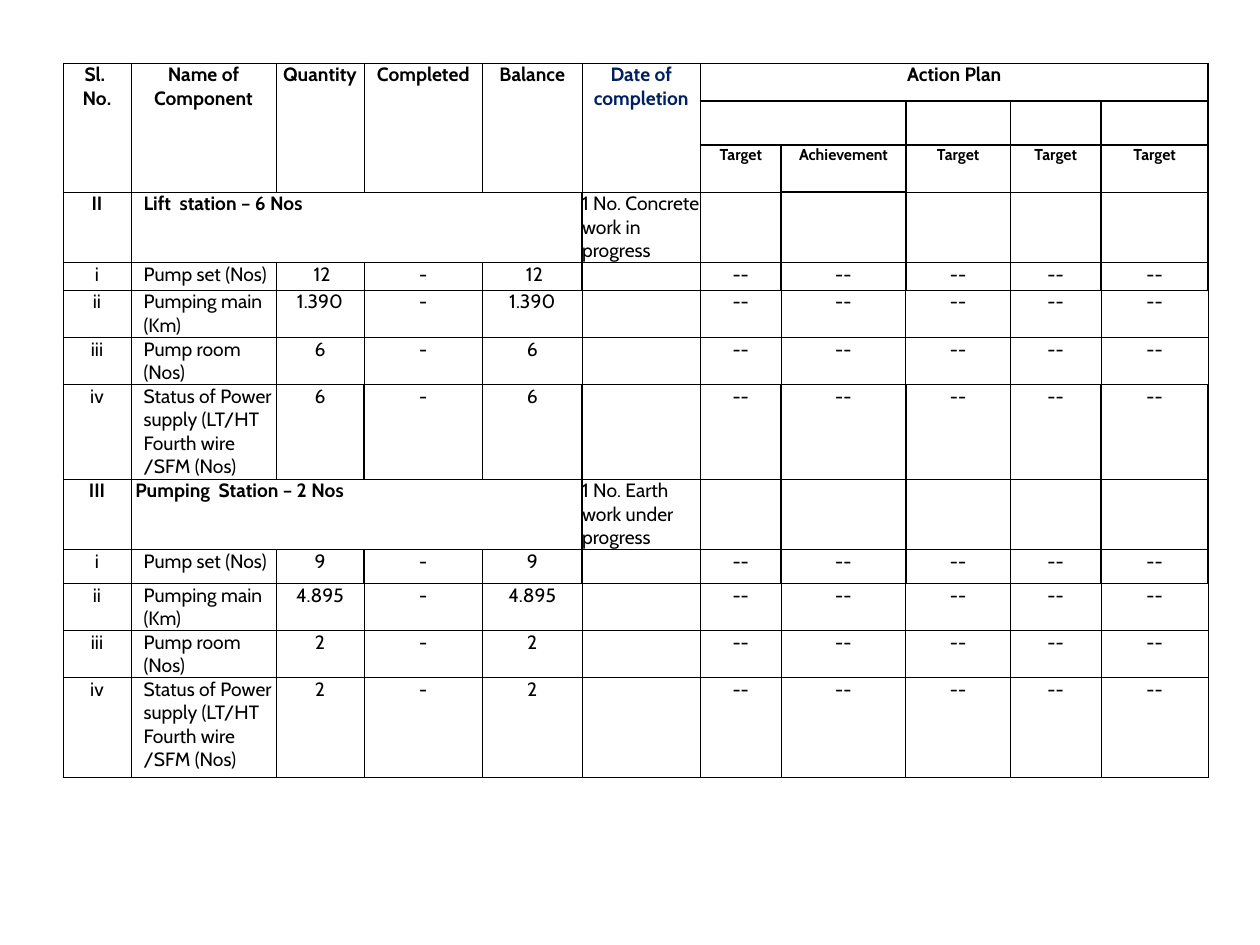
import pptx
import pptx.dml.color
import pptx.enum.text
import pptx.oxml
import pptx.oxml.ns
import pptx.util

Inches = pptx.util.Inches
Pt = pptx.util.Pt
ALIGN = pptx.enum.text.PP_ALIGN
BLACK = pptx.dml.color.RGBColor(0x00, 0x00, 0x00)
NAVY = pptx.dml.color.RGBColor(0x00, 0x20, 0x60)

COLUMN_WIDTHS = [0.54, 1.15, 0.7, 0.94, 0.79, 0.94, 0.64, 0.99, 0.83, 0.72, 0.85]
ROW_HEIGHTS = [0.3, 0.35, 0.37, 0.31, 0.22, 0.33, 0.33, 0.75, 0.28, 0.27, 0.33, 0.33, 0.79]
HEADINGS = ["Sl. \nNo.", "Name of Component", "Quantity", "Completed", "Balance",
            "Date of completion", "Action Plan"]
TARGETS = ["Target", "Achievement", "Target", "Target", "Target"]
COMPONENTS = ["Pump set (Nos)", "Pumping main (Km)", "Pump room (Nos)",
              "Status of Power supply (LT/HT Fourth wire /SFM (Nos)"]
NUMERALS = ["i", "ii", "iii", "iv"]
STATIONS = [
    (3, "II", "Lift  station – 6 Nos", 0.1, "1 No. Concrete work in progress",
     [" 12", "1.390", "6", "6"]),
    (8, "III", " Pumping  Station – 2 Nos", 0, "1 No. Earth work under progress",
     ["9", "4.895", "2", "2"]),
]

PLAN_COLUMNS = range(6, 11)
THIN, THICK = 0.5, 1
THICK_HORIZONTALS = ({(y, column) for y in (1, 2) for column in PLAN_COLUMNS}
                     | {(y, 3) for y in (10, 11, 12)} | {(3, 7), (7, 5)})
THICK_VERTICALS = ({(row, x) for row in (0, 1, 2) for x in range(6, 12)}
                   | {(row, x) for row in (3, 4, 7, 8, 9) for x in range(5, 12)}
                   | {(7, 3), (9, 3)})


def write(cell, text, align=ALIGN.CENTER, indent=0, size=11, bold=False, color=BLACK):
    font_format = {"name": "Cabin", "size": Pt(size), "bold": bold}
    cell.text = text
    for paragraph in cell.text_frame.paragraphs:
        paragraph.alignment = align
        if indent:
            properties = paragraph._p.get_or_add_pPr()
            properties.set("marL", str(Inches(indent)))
            properties.set("indent", "0")
        for run in paragraph.runs:
            for attribute, value in font_format.items():
                setattr(run.font, attribute, value)
            run.font.color.rgb = color


def draw_borders(cell, row, column):
    widths = {
        "lnL": (row, column) in THICK_VERTICALS,
        "lnR": (row, column + 1) in THICK_VERTICALS,
        "lnT": (row, column) in THICK_HORIZONTALS,
        "lnB": (row + 1, column) in THICK_HORIZONTALS,
    }
    for side, thick in widths.items():
        cell._tc.get_or_add_tcPr().append(pptx.oxml.parse_xml(
            f'<a:{side} {pptx.oxml.ns.nsdecls("a")} w="{Pt(THICK if thick else THIN)}">'
            f'<a:solidFill><a:srgbClr val="{BLACK}"/></a:solidFill></a:{side}>'))


def prepare_cells(table):
    margins = {f"margin_{side}": 0 for side in ("left", "top", "right", "bottom")}
    for row in range(len(ROW_HEIGHTS)):
        for column in range(len(COLUMN_WIDTHS)):
            cell = table.cell(row, column)
            for attribute, value in margins.items():
                setattr(cell, attribute, value)
            draw_borders(cell, row, column)
            cell.fill.background()
            cell.text_frame.paragraphs[0]._p.append(pptx.oxml.parse_xml(
                f'<a:endParaRPr {pptx.oxml.ns.nsdecls("a")} sz="1100"/>'))


def add_header(table):
    for column, heading in enumerate(HEADINGS):
        color = NAVY if heading == "Date of completion" else BLACK
        write(table.cell(0, column), heading, bold=True, color=color)
        if column < PLAN_COLUMNS[0]:
            table.cell(0, column).merge(table.cell(2, column))
    table.cell(0, 6).merge(table.cell(0, 10))
    table.cell(1, 6).merge(table.cell(1, 7))
    for column, target in zip(PLAN_COLUMNS, TARGETS):
        write(table.cell(2, column), target, size=9, bold=True)


def add_station(table, top_row, number, title, indent, progress, quantities):
    write(table.cell(top_row, 0), number, bold=True)
    write(table.cell(top_row, 1), title, align=ALIGN.LEFT, indent=indent, bold=True)
    table.cell(top_row, 1).merge(table.cell(top_row, 4))
    write(table.cell(top_row, 5), progress, align=ALIGN.LEFT)
    components = zip(NUMERALS, COMPONENTS, quantities)
    for row, (numeral, component, quantity) in enumerate(components, top_row + 1):
        write(table.cell(row, 1), component, align=ALIGN.LEFT, indent=0.1)
        centred = {0: numeral, 2: quantity, 3: "-", 4: quantity}
        centred.update(dict.fromkeys(PLAN_COLUMNS, "--"))
        for column, text in centred.items():
            write(table.cell(row, column), text)


def add_progress_table(slide, left, top, width, height):
    table = slide.shapes.add_table(
        len(ROW_HEIGHTS), len(COLUMN_WIDTHS), left, top, width, height).table
    for option in ("first_row", "horz_banding"):
        setattr(table, option, False)
    for column, width_inches in zip(table.columns, COLUMN_WIDTHS):
        column.width = Inches(width_inches)
    for row, height_inches in zip(table.rows, ROW_HEIGHTS):
        row.height = Inches(height_inches)
    prepare_cells(table)
    add_header(table)
    for station in STATIONS:
        add_station(table, *station)


def main():
    presentation = pptx.Presentation()
    presentation.slide_width = Inches(10)
    presentation.slide_height = Inches(7.5)
    slide = presentation.slides.add_slide(presentation.slide_layouts[6])
    add_progress_table(slide, Inches(0.5), Inches(0.5), Inches(9.08), Inches(5.97))
    presentation.save("out.pptx")


if __name__ == "__main__":
    main()
